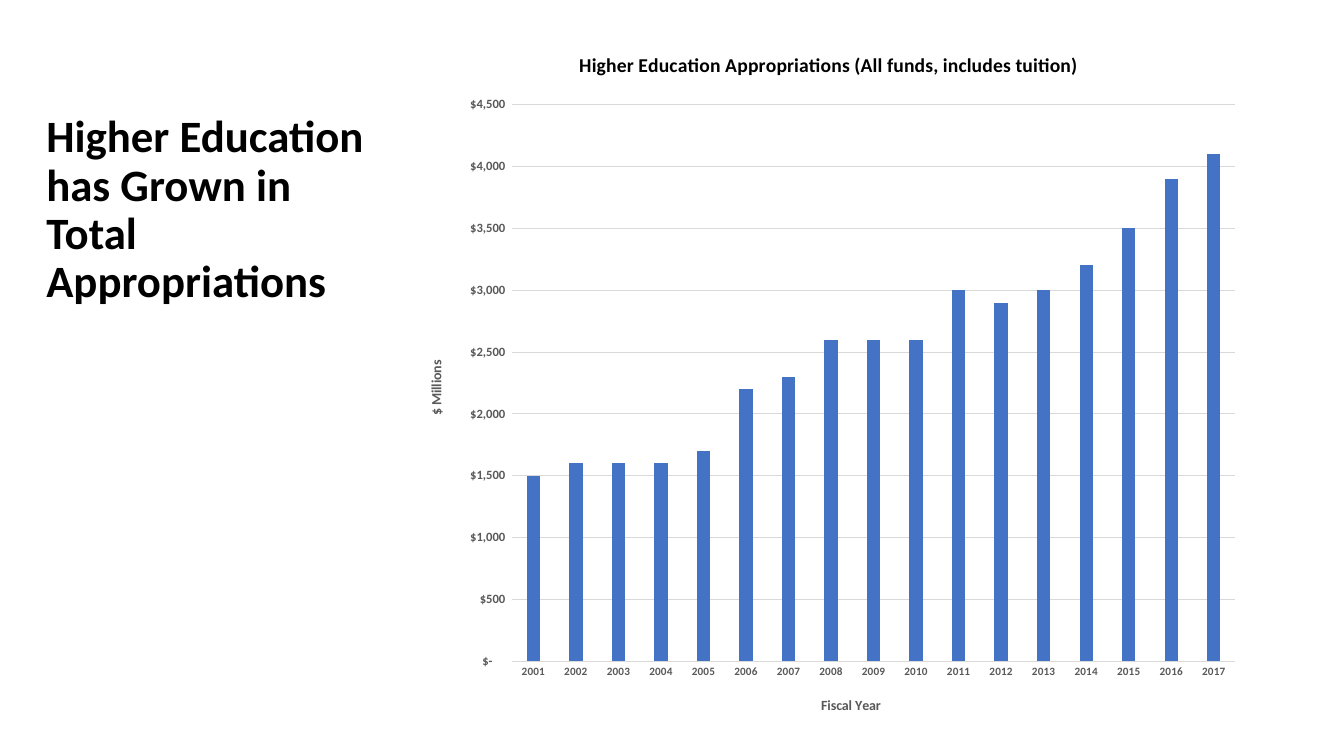
from pptx import Presentation
from pptx.chart.data import CategoryChartData
from pptx.dml.color import RGBColor
from pptx.enum.chart import XL_CHART_TYPE, XL_TICK_MARK
from pptx.enum.text import MSO_ANCHOR, MSO_AUTO_SIZE, PP_ALIGN
from pptx.oxml import parse_xml
from pptx.oxml.ns import nsdecls, qn
from pptx.util import Inches, Pt

FONT = "Calibri"
BLACK = RGBColor(0x00, 0x00, 0x00)
GRAY = RGBColor(0x59, 0x59, 0x59)
LIGHT_GRAY = RGBColor(0xD9, 0xD9, 0xD9)
BLUE = RGBColor(0x44, 0x72, 0xC4)

CHART_WIDTH, CHART_HEIGHT = Inches(8.39), Inches(7.01)
FIRST_YEAR = 2001
APPROPRIATIONS = [1500, 1600, 1600, 1600, 1700, 2200, 2300, 2600, 2600,
                  2600, 3000, 2900, 3000, 3200, 3500, 3900, 4100]
DOLLARS = '_("$"* #,##0_);_("$"* \\(#,##0\\);_("$"* "-"??_);_(@_)'


def style_font(font, size, color):
    font.name = FONT
    font.size = Pt(size)
    font.bold = True
    font.color.rgb = color


def style_line(line, color):
    line.color.rgb = color
    line.width = Pt(0.75)


def place(element, position, left, top, width=None, height=None):
    """Set a manual layout, measured inside the chart, at a child position."""
    for old in element.findall(qn("c:layout")):
        element.remove(old)
    settings = {"xMode": "edge", "yMode": "edge",
                "x": left / CHART_WIDTH, "y": top / CHART_HEIGHT}
    if width and height:
        settings = {"layoutTarget": "inner", **settings,
                    "w": width / CHART_WIDTH, "h": height / CHART_HEIGHT}
    values = "".join(f'<c:{key} val="{value}"/>'
                     for key, value in settings.items())
    element.insert(position, parse_xml(
        f'<c:layout {nsdecls("c")}><c:manualLayout>{values}'
        '</c:manualLayout></c:layout>'))


def add_chart_label(label, text, size, color, left, top):
    label.text_frame.text = text
    style_font(label.text_frame.paragraphs[0].font, size, color)
    place(label.element, 1, left, top)


def style_axis(axis, size):
    axis.major_tick_mark = XL_TICK_MARK.NONE
    axis.minor_tick_mark = XL_TICK_MARK.NONE
    style_font(axis.tick_labels.font, size, GRAY)


def add_headline(slide, text):
    headline = slide.shapes.title
    headline.left, headline.top = Inches(0.36), Inches(1.08)
    headline.width, headline.height = Inches(3.59), Inches(5.34)
    frame = headline.text_frame
    frame.text = text
    frame.word_wrap = True
    frame.auto_size = MSO_AUTO_SIZE.NONE
    frame.vertical_anchor = MSO_ANCHOR.TOP
    paragraph = frame.paragraphs[0]
    paragraph.alignment = PP_ALIGN.LEFT
    paragraph.line_spacing = 0.9
    style_font(paragraph.font, 32, BLACK)


def add_appropriations_chart(slide):
    data = CategoryChartData()
    data.categories = [str(FIRST_YEAR + i) for i in range(len(APPROPRIATIONS))]
    data.add_series("Series 1", APPROPRIATIONS)
    chart = slide.shapes.add_chart(
        XL_CHART_TYPE.COLUMN_CLUSTERED, Inches(4.03), Inches(0.28),
        CHART_WIDTH, CHART_HEIGHT, data).chart
    chart.font.name = FONT
    chart.font.size = Pt(10)
    chart.has_legend = False
    add_chart_label(chart.chart_title,
                    "Higher Education Appropriations (All funds, includes tuition)",
                    14, BLACK, Inches(1.68), Inches(0.19))

    # Columns
    plot = chart.plots[0]
    plot.vary_by_categories = False
    plot.gap_width = 219
    plot.overlap = -27
    columns = plot.series[0].format.fill
    columns.solid()
    columns.fore_color.rgb = BLUE
    plot_area = chart.element.find(".//" + qn("c:plotArea"))
    place(plot_area, 0, Inches(1.05), Inches(0.76), Inches(7.17), Inches(5.52))

    # Fiscal years
    years = chart.category_axis
    style_axis(years, 8)
    style_line(years.format.line, LIGHT_GRAY)
    add_chart_label(years.axis_title, "Fiscal Year", 10, GRAY,
                    Inches(4.09), Inches(6.6))

    # Dollar amounts
    dollars = chart.value_axis
    style_axis(dollars, 9)
    dollars.minimum_scale, dollars.maximum_scale = 0, 4500
    dollars.major_unit = 500
    dollars.tick_labels.number_format = DOLLARS
    dollars.tick_labels.number_format_is_linked = False
    dollars.format.line.fill.background()
    style_line(dollars.major_gridlines.format.line, LIGHT_GRAY)
    add_chart_label(dollars.axis_title, "$ Millions", 10, GRAY,
                    Inches(0.18), Inches(3.27))


def main():
    presentation = Presentation()
    presentation.slide_width = Inches(13.33)
    presentation.slide_height = Inches(7.5)
    title_only = presentation.slide_layouts[5]
    slide = presentation.slides.add_slide(title_only)
    add_headline(slide, "Higher Education has Grown in Total Appropriations")
    add_appropriations_chart(slide)
    presentation.save("out.pptx")


if __name__ == "__main__":
    main()
